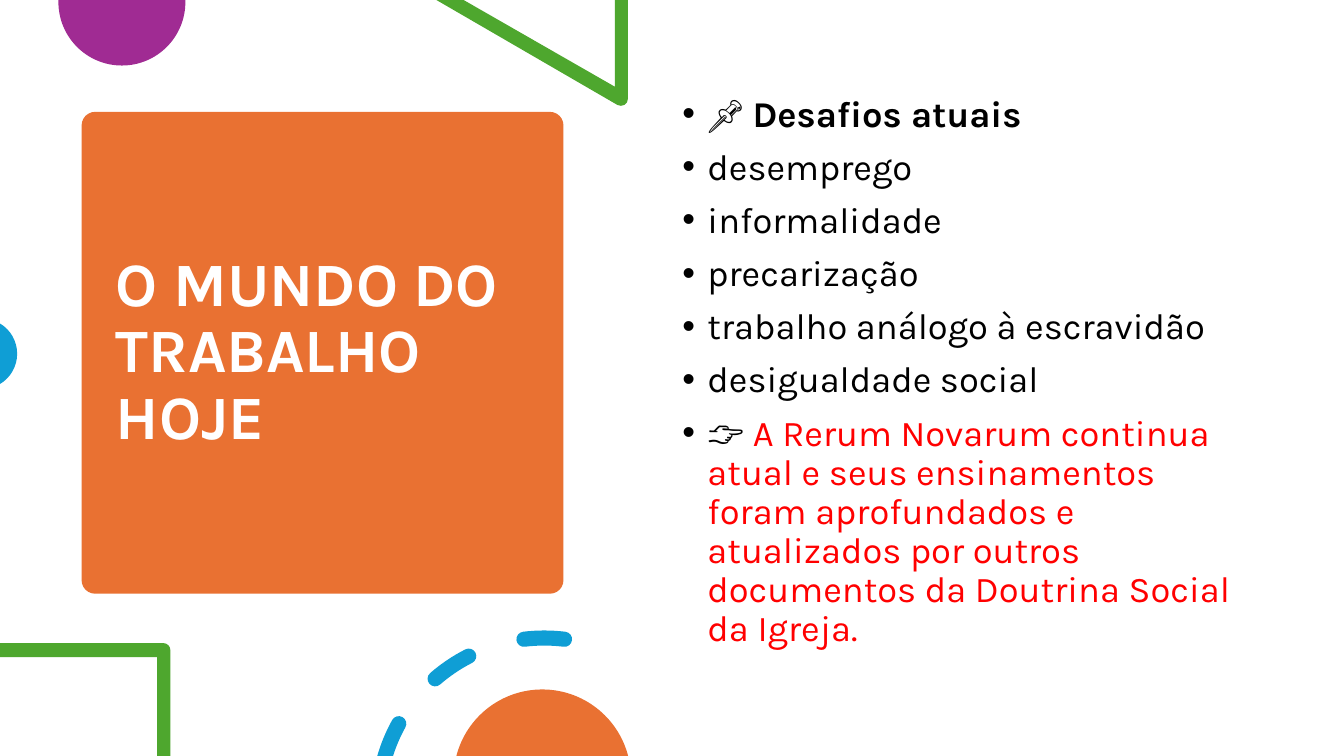
from dataclasses import dataclass
from itertools import chain
from math import ceil, cos, radians, sin, tan

from lxml.etree import SubElement
from pptx import Presentation
from pptx.dml.color import RGBColor as Rgb
from pptx.enum.shapes import MSO_SHAPE as Preset
from pptx.enum.text import MSO_ANCHOR as Anchor, PP_ALIGN as Align
from pptx.oxml.ns import qn
from pptx.util import Inches, Pt

WIDTH, HEIGHT = 40 / 3, 7.5


@dataclass(frozen=True)
class Theme:
    font: str = "Karla"
    title_size: float = 44
    body_size: float = 25.9
    line_spacing: float = 0.9
    paragraph_gap: float = 10
    indent: float = 0.25
    white: str = "FFFFFF"
    black: str = "000000"
    red: str = "FF0000"
    orange: str = "E97132"
    purple: str = "A02B93"
    green: str = "4EA72E"
    blue: str = "0F9ED5"


def polar(center, radius, angle):
    return center[0] + radius * cos(angle), center[1] + radius * sin(angle)


def lines(*points):
    return [(point,) for point in points]


def arc(center, radius, start, end):
    pieces = ceil(abs(end - start) / 90)
    step = radians(end - start) / pieces
    handle = radius * 4 / 3 * tan(step / 4)
    segments = lines(polar(center, radius, radians(start)))
    for piece in range(pieces):
        a = radians(start) + piece * step
        b = a + step
        x, y = polar(center, radius, a)
        end_x, end_y = polar(center, radius, b)
        segments.append((
            (x - handle * sin(a), y + handle * cos(a)),
            (end_x + handle * sin(b), end_y - handle * cos(b)),
            (end_x, end_y),
        ))
    return segments


def dash(center, radius, thickness, outer_start, inner_start, end):
    half = thickness / 2
    tip = polar(center, radius, radians(end))
    segments = arc(center, radius + half, outer_start, end)
    segments += arc(tip, half, end, end + 180)[1:]
    segments += arc(center, radius - half, end, inner_start)[1:]
    if outer_start == inner_start:
        tail = polar(center, radius, radians(outer_start))
        segments += arc(tail, half, outer_start + 180, outer_start + 360)[1:]
    return segments


class SlideBuilder:
    def __init__(self, slide, theme):
        self.shapes = slide.shapes
        self.theme = theme

    def paint(self, shape, color):
        shape.shadow.inherit = False
        shape.fill.solid()
        shape.fill.fore_color.rgb = Rgb.from_string(color)
        shape.line.fill.background()

    def card(self, left, top, width, height, color, rounding):
        card = self.shapes.add_shape(
            Preset.ROUNDED_RECTANGLE, Inches(left), Inches(top), Inches(width), Inches(height)
        )
        card.adjustments[0] = rounding
        self.paint(card, color)

    def outline(self, color, *contours):
        builder = None
        for contour in contours:
            corners = [(Inches(x), Inches(y)) for x, y in chain(*contour)]
            if builder is None:
                builder = self.shapes.build_freeform(*corners[0])
            else:
                builder.move_to(*corners[0])
            builder.add_line_segments(corners[1:], close=True)
        shape = builder.convert_to_shape()
        self.curve(shape, chain(*contours))
        self.paint(shape, color)

    def curve(self, shape, segments):
        nodes = iter(list(shape._element.iter(qn("a:moveTo"), qn("a:lnTo"))))
        for segment in segments:
            first, *others = [next(nodes) for _ in segment]
            if others:
                first.tag = qn("a:cubicBezTo")
            for other in others:
                first.append(other[0])
                other.getparent().remove(other)

    def text(self, left, top, width, height, paragraphs, size, anchor, bulleted=False):
        frame = self.shapes.add_textbox(
            Inches(left), Inches(top), Inches(width), Inches(height)
        ).text_frame
        frame.word_wrap = True
        frame.vertical_anchor = anchor
        for index, runs in enumerate(paragraphs):
            paragraph = frame.add_paragraph() if index else frame.paragraphs[0]
            paragraph.alignment = Align.LEFT
            paragraph.line_spacing = self.theme.line_spacing
            if index:
                paragraph.space_before = Pt(self.theme.paragraph_gap)
            if bulleted:
                self.bullet(paragraph)
            for words, color, bold in runs:
                run = paragraph.add_run()
                run.text = words
                run.font.name = self.theme.font
                run.font.size = Pt(size)
                run.font.bold = bold
                run.font.color.rgb = Rgb.from_string(color)

    def bullet(self, paragraph):
        properties = paragraph._p.get_or_add_pPr()
        properties.set("marL", str(Inches(self.theme.indent)))
        properties.set("indent", str(-Inches(self.theme.indent)))
        SubElement(properties, qn("a:buFont")).set("typeface", "Arial")
        SubElement(properties, qn("a:buChar")).set("char", "•")


def main():
    deck = Presentation()
    deck.slide_width, deck.slide_height = Inches(WIDTH), Inches(HEIGHT)
    theme = Theme()
    page = SlideBuilder(deck.slides.add_slide(deck.slide_layouts[6]), theme)

    page.card(0.81, 1.11, 4.78, 4.78, theme.orange, 0.028)
    title = [[("O MUNDO DO TRABALHO HOJE", theme.white, True)]]
    page.text(1.05, 1.22, 4.31, 4.56, title, theme.title_size, Anchor.MIDDLE)

    page.outline(theme.purple, lines((1.84, 0), (0.58, 0)) + arc((1.21, 0.02), 0.63, 180, 0))
    triangle = lines((6.23, 0), (6.1, 0), (6.1, 0.86), (4.6, 0), (4.33, 0))
    page.outline(theme.green, triangle + arc((6.16, 0.98), 0.07, 120, 0))
    page.outline(theme.blue, arc((-0.18, 3.51), 0.35, -59, 59))

    challenges = [
        "desemprego",
        "informalidade",
        "precarização",
        "trabalho análogo à escravidão",
        "desigualdade social",
    ]
    conclusion = (
        "A Rerum Novarum continua atual e seus ensinamentos foram aprofundados e "
        "atualizados por outros documentos da Doutrina Social da Igreja."
    )
    body = [
        [("📌 Desafios atuais", theme.black, True)],
        *[[(challenge, theme.black, False)] for challenge in challenges],
        [("👉 ", theme.black, False), (conclusion, theme.red, False)],
    ]
    page.text(6.67, 0.9, 5.75, 5.35, body, theme.body_size, Anchor.TOP, bulleted=True)

    frame = lines((1.69, HEIGHT), (1.56, HEIGHT), (1.56, 6.52), (0, 6.52), (0, 6.38))
    page.outline(theme.green, frame + arc((1.62, 6.45), 0.07, -90, 0))
    dash_angles = [(196.2, 197.7, 209), (229, 229, 243), (263, 263, 277)]
    page.outline(theme.blue, *[dash((5.4, 7.98), 1.65, 0.15, *angles) for angles in dash_angles])
    page.outline(theme.orange, arc((5.38, 7.72), 0.88, 194.5, 345.5))

    deck.save("out.pptx")


if __name__ == "__main__":
    main()
